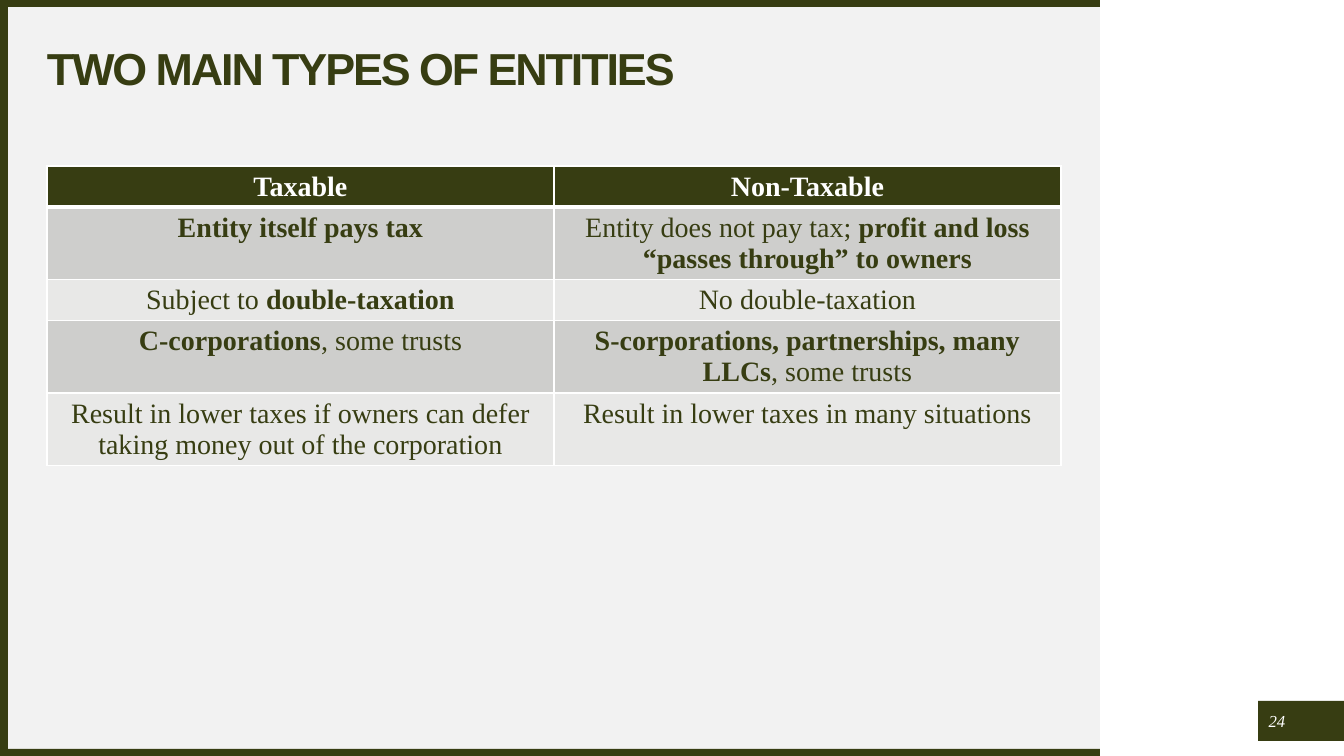
from lxml import etree
from pptx import Presentation
from pptx.dml.color import RGBColor
from pptx.enum.shapes import MSO_SHAPE
from pptx.enum.text import MSO_ANCHOR, PP_ALIGN
from pptx.oxml.ns import qn
from pptx.util import Emu, Pt

PX = 914400 / 100.8
SLIDE_WIDTH, SLIDE_HEIGHT = 1344, 756
PANEL_WIDTH, BAR = 1100, 7
SERIF, SANS = "Times New Roman", "Arial"
COLORS = {
    "olive": "373D12",
    "panel": "F2F2F2",
    "white": "FFFFFF",
    "dark_band": "CECECC",
    "light_band": "E8E8E7",
}
ROW_HEIGHTS = [41, 72, 41, 72, 72]
ENTITY_ROWS = [
    ["**Taxable**", "**Non-Taxable**"],
    ["**Entity itself pays tax**",
     "Entity does not pay tax; **profit and loss “passes through” to owners**"],
    ["Subject to **double-taxation**", "No double-taxation"],
    ["**C-corporations**, some trusts",
     "**S-corporations, partnerships, many LLCs**, some trusts"],
    ["Result in lower taxes if owners can defer taking money out of the corporation",
     "Result in lower taxes in many situations"],
]


def px(length):
    return Emu(round(length * PX))


def color(name):
    return RGBColor.from_string(COLORS[name])


def style_font(font, name, size, color_name, bold=False, italic=False):
    font.name = name
    font.size = Pt(size)
    font.bold = bold
    font.italic = italic
    font.color.rgb = color(color_name)


def clear_margins(text_frame):
    text_frame.margin_left = text_frame.margin_right = 0
    text_frame.margin_top = text_frame.margin_bottom = 0
    text_frame.vertical_anchor = MSO_ANCHOR.MIDDLE
    text_frame.word_wrap = True


def add_block(slide, left, top, width, height, color_name):
    shape = slide.shapes.add_shape(
        MSO_SHAPE.RECTANGLE, px(left), px(top), px(width), px(height))
    shape.shadow.inherit = False
    shape.fill.solid()
    shape.fill.fore_color.rgb = color(color_name)
    shape.line.fill.background()


def add_frame(slide, left, top, width, height):
    add_block(slide, left, top, width, height, "panel")
    for bar_top in (top, top + height - BAR):
        add_block(slide, left, bar_top, width, BAR, "olive")
    add_block(slide, left, top, BAR + 1, height, "olive")


def place_title(slide, left, top, width, height):
    title = slide.shapes.title
    title.left, title.top, title.width, title.height = map(px, (left, top, width, height))
    slide.shapes._spTree.append(title._element)
    title.text_frame.text = "TWO MAIN TYPES OF ENTITIES"
    clear_margins(title.text_frame)
    paragraph = title.text_frame.paragraphs[0]
    paragraph.alignment = PP_ALIGN.LEFT
    paragraph.line_spacing = 0.9
    run = paragraph.runs[0]
    style_font(run.font, SANS, 32, "olive", bold=True)
    run.font._element.set("spc", "-150")


def add_border(cell, side, width):
    line = etree.SubElement(cell._tc.get_or_add_tcPr(), qn(f"a:{side}"), w=str(Pt(width)))
    fill = etree.SubElement(line, qn("a:solidFill"))
    etree.SubElement(fill, qn("a:srgbClr"), val=COLORS["white"])


def fill_cell(cell, text, row_index):
    header = row_index == 0
    for side in ("lnL", "lnR", "lnT", "lnB"):
        under_header = (row_index, side) in ((0, "lnB"), (1, "lnT"))
        add_border(cell, side, 3 if under_header else 1)
    bands = ("light_band", "dark_band")
    cell.fill.solid()
    cell.fill.fore_color.rgb = color("olive" if header else bands[row_index % 2])
    paragraph = cell.text_frame.paragraphs[0]
    paragraph.alignment = PP_ALIGN.CENTER
    for index, part in enumerate(text.split("**")):
        if part:
            run = paragraph.add_run()
            run.text = part
            style_font(run.font, SERIF, 20, "white" if header else "olive",
                       bold=index % 2 == 1)


def add_entity_table(slide, left, top, width):
    column_count = len(ENTITY_ROWS[0])
    table = slide.shapes.add_table(
        len(ENTITY_ROWS), column_count,
        px(left), px(top), px(width), px(sum(ROW_HEIGHTS))).table
    for column in table.columns:
        column.width = px(width // column_count)
    for row_index, (row, height) in enumerate(zip(table.rows, ROW_HEIGHTS)):
        row.height = px(height)
        for cell, text in zip(row.cells, ENTITY_ROWS[row_index]):
            fill_cell(cell, text, row_index)


def add_page_number(slide, left, top, width, height):
    add_block(slide, left, top, width, height, "olive")
    box = slide.shapes.add_textbox(px(left + 4), px(top + 5), px(30), px(height - 10))
    clear_margins(box.text_frame)
    box.text_frame.text = "24"
    paragraph = box.text_frame.paragraphs[0]
    paragraph.alignment = PP_ALIGN.CENTER
    style_font(paragraph.runs[0].font, SERIF, 12, "white", italic=True)


def main():
    presentation = Presentation()
    presentation.slide_width = px(SLIDE_WIDTH)
    presentation.slide_height = px(SLIDE_HEIGHT)
    slide = presentation.slides.add_slide(presentation.slide_layouts[5])
    add_frame(slide, 0, 0, PANEL_WIDTH, SLIDE_HEIGHT)
    place_title(slide, 47, 47, 1014, 47)
    add_entity_table(slide, 47, 166, 1014)
    add_page_number(slide, 1258, 701, 86, 40)
    presentation.save("out.pptx")


if __name__ == "__main__":
    main()
